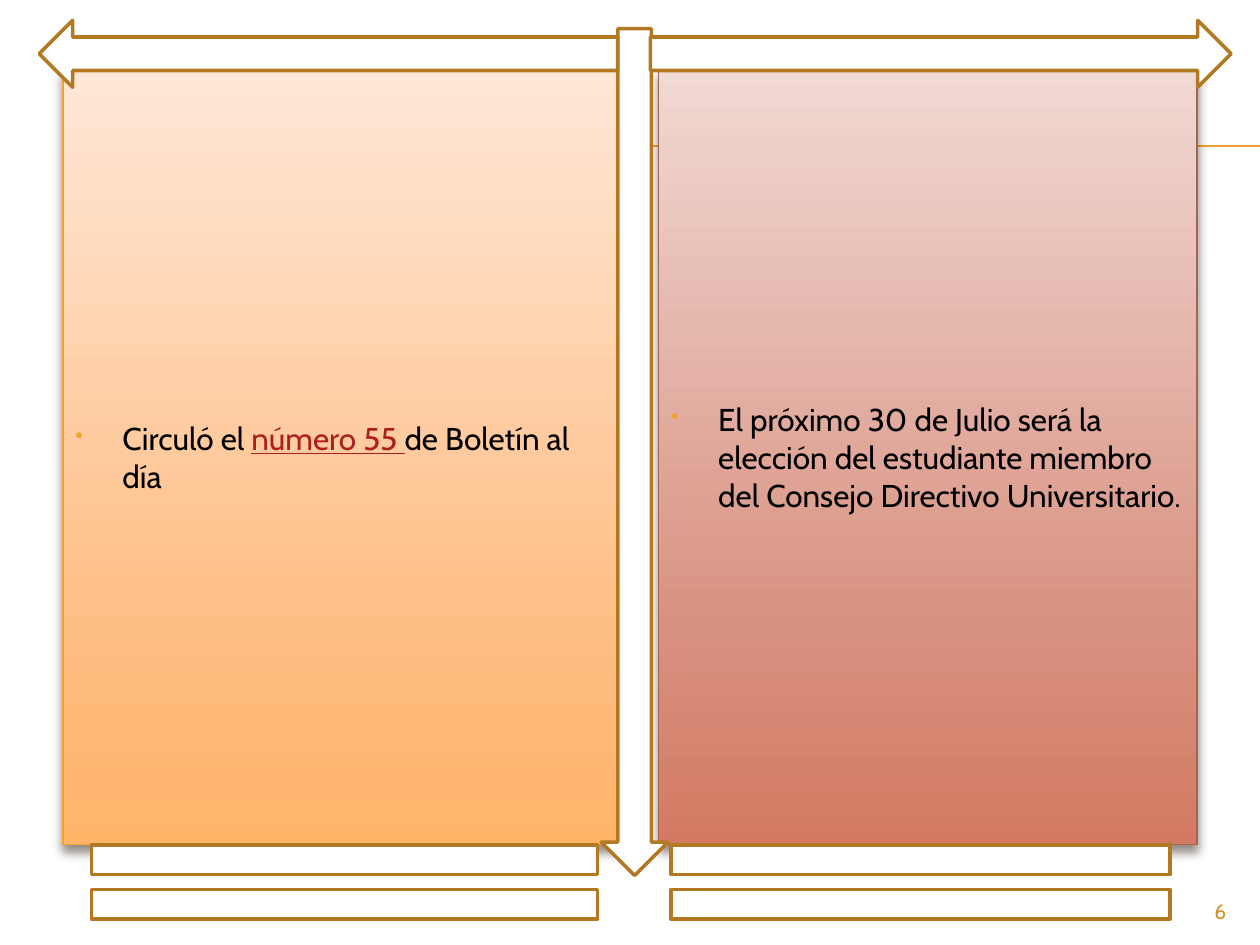
"""Build the two-panel news slide with framing arrows."""
from dataclasses import dataclass

import pptx
import pptx.dml.color
import pptx.enum.shapes
import pptx.enum.text
import pptx.oxml
import pptx.oxml.ns
import pptx.util

Cm = pptx.util.Cm
Pt = pptx.util.Pt
RGBColor = pptx.dml.color.RGBColor
SHAPE = pptx.enum.shapes.MSO_SHAPE
ALIGN = pptx.enum.text.PP_ALIGN

ORANGE = RGBColor(0xF0, 0xA2, 0x2E)
RUST = RGBColor(0xA5, 0x64, 0x4E)
BROWN = RGBColor(0xB2, 0x78, 0x22)
AMBER = RGBColor(0xD4, 0x8F, 0x29)
RED = RGBColor(0xAD, 0x1F, 0x1F)
SHADOW = RGBColor(0x4E, 0x3B, 0x30)
BLACK = RGBColor(0, 0, 0)
WHITE = RGBColor(0xFF, 0xFF, 0xFF)
PEACH_STOPS = ((0, RGBColor(0xFF, 0xE7, 0xD7)), (72, RGBColor(0xFF, 0xBE, 0x84)),
               (100, RGBColor(0xFF, 0xB4, 0x68)))
ROSE_STOPS = ((0, RGBColor(0xF1, 0xD9, 0xD4)), (72, RGBColor(0xD8, 0x91, 0x80)),
              (100, RGBColor(0xD4, 0x7A, 0x62)))

BODY = {"name": "Cabin", "size": Pt(18)}
NUMBER = {"name": "Cabin", "size": Pt(12)}


@dataclass(frozen=True)
class Box:
    left: float
    top: float
    width: float
    height: float

    def lengths(self) -> tuple:
        return Cm(self.left), Cm(self.top), Cm(self.width), Cm(self.height)


@dataclass(frozen=True)
class Span:
    text: str
    color: RGBColor = BLACK
    underline: bool = False


@dataclass(frozen=True)
class Panel:
    box: Box
    stops: tuple
    border: RGBColor
    spans: tuple


@dataclass(frozen=True)
class Outline:
    kind: SHAPE
    box: Box


PANELS = (
    Panel(Box(1.27, 1.4, 11.23, 15.62), PEACH_STOPS, ORANGE,
          (Span("Circuló el "), Span("número 55 ", RED, True), Span("de Boletín al día"))),
    Panel(Box(13.28, 1.4, 10.85, 15.62), ROSE_STOPS, RUST,
          (Span("El próximo 30 de Julio será la elección del estudiante miembro "
                "del Consejo Directivo Universitario."),)),
)
OUTLINES = (
    Outline(SHAPE.DOWN_ARROW, Box(12.12, 0.58, 1.35, 17.07)),
    Outline(SHAPE.RIGHT_ARROW, Box(13.11, 0.41, 11.71, 1.35)),
    Outline(SHAPE.LEFT_ARROW, Box(0.79, 0.41, 11.66, 1.35)),
    Outline(SHAPE.MATH_EQUAL, Box(0, 16.51, 13.89, 2.54)),
    Outline(SHAPE.MATH_EQUAL, Box(11.71, 16.51, 13.69, 2.54)),
)


def xml(markup: str):
    head, mark, tail = markup.partition(">")
    if head.endswith("/"):
        head, mark = head[:-1], "/>"
    return pptx.oxml.parse_xml(f"{head} {pptx.oxml.ns.nsdecls('a')}{mark}{tail}")


def add_run(p, span: Span, formats: dict) -> None:
    r = p.add_run()
    r.text = span.text
    for key, value in {**formats, "underline": span.underline}.items():
        setattr(r.font, key, value)
    r.font.color.rgb = span.color


def add_rule(s, y: float) -> None:
    line = s.shapes.add_connector(pptx.enum.shapes.MSO_CONNECTOR.STRAIGHT,
                                  Cm(1.42), Cm(y), Cm(25.4), Cm(y))
    line.line.color.rgb = ORANGE
    line.line.width = Pt(0.75)
    line.element.spPr.append(xml("<a:effectLst/>"))


def add_panel(s, panel: Panel) -> None:
    sp = s.shapes.add_shape(SHAPE.RECTANGLE, *panel.box.lengths())
    stops = "".join(f'<a:gs pos="{pos * 1000}"><a:srgbClr val="{color}"/></a:gs>'
                    for pos, color in panel.stops)
    sp.element.spPr.append(xml(f'<a:gradFill rotWithShape="1"><a:gsLst>{stops}</a:gsLst>'
                               '<a:lin ang="5400000" scaled="0"/></a:gradFill>'))
    sp.line.color.rgb = panel.border
    sp.line.width = Pt(0.79)
    sp.element.spPr.append(xml(
        f'<a:effectLst><a:outerShdw blurRad="{Pt(6)}" dist="{Pt(4)}" dir="5400000" '
        f'rotWithShape="0"><a:srgbClr val="{SHADOW}"><a:alpha val="60000"/></a:srgbClr>'
        '</a:outerShdw></a:effectLst>'))
    tf = sp.text_frame
    tf.word_wrap = True
    tf.vertical_anchor = pptx.enum.text.MSO_ANCHOR.MIDDLE
    p = tf.paragraphs[0]
    p.alignment = ALIGN.LEFT
    for span in panel.spans:
        add_run(p, span, BODY)
    ppr = p._p.get_or_add_pPr()
    for key, value in {"marL": Cm(0.95), "indent": -Cm(0.95)}.items():
        ppr.set(key, str(value))
    for markup in ('<a:spcBef><a:spcPct val="20000"/></a:spcBef>',
                   f'<a:buClr><a:srgbClr val="{ORANGE}"/></a:buClr>',
                   '<a:buSzPct val="70000"/>',
                   '<a:buChar char="•"/>'):
        ppr.append(xml(markup))


def add_outline(s, outline: Outline) -> None:
    sp = s.shapes.add_shape(outline.kind, *outline.box.lengths())
    sp.shadow.inherit = False
    sp.fill.solid()
    sp.fill.fore_color.rgb = WHITE
    sp.line.color.rgb = BROWN
    sp.line.width = Pt(2)


def add_number(s, box: Box, text: str) -> None:
    tf = s.shapes.add_textbox(*box.lengths()).text_frame
    tf.word_wrap = True
    p = tf.paragraphs[0]
    p.alignment = ALIGN.RIGHT
    add_run(p, Span(text, AMBER), NUMBER)


def main() -> None:
    prs = pptx.Presentation()
    prs.slide_width, prs.slide_height = Cm(25.4), Cm(19.05)
    s = prs.slides.add_slide(prs.slide_layouts[6])
    for y in (2.93, 2.95):
        add_rule(s, y)
    for panel in PANELS:
        add_panel(s, panel)
    for outline in OUTLINES:
        add_outline(s, outline)
    add_number(s, Box(22.86, 17.98, 2.11, 0.69), "6")
    prs.save("out.pptx")


if __name__ == "__main__":
    main()
